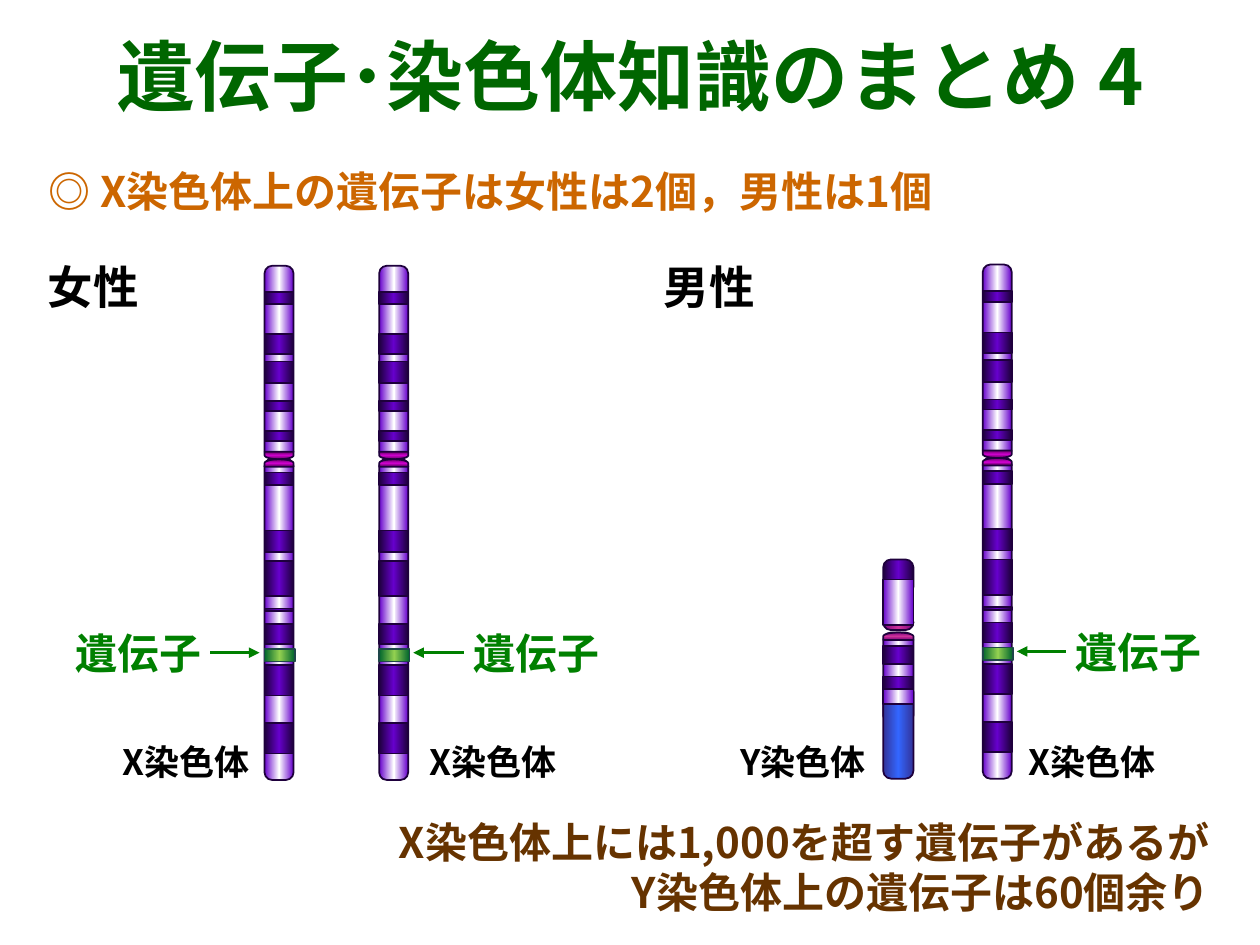
from copy import deepcopy
from dataclasses import dataclass
from typing import NamedTuple

from lxml.etree import SubElement
from pptx import Presentation
from pptx.dml.color import RGBColor as Rgb
from pptx.enum.shapes import MSO_CONNECTOR as Connector, MSO_SHAPE as Preset
from pptx.enum.text import MSO_ANCHOR as Anchor, MSO_AUTO_SIZE as AutoSize, PP_ALIGN as Align
from pptx.oxml.ns import qn
from pptx.util import Inches, Pt


class Box(NamedTuple):
    """A rectangle in cells of the slide grid."""
    column: float
    row: float
    columns: float
    rows: float


class Gradient(NamedTuple):
    """Edge and centre colours of a tube-like shading, with its outline."""
    edge: str
    centre: str
    line: str = "1E003C"


@dataclass(frozen=True)
class Theme:
    """Colours, fonts and type sizes of the slide."""
    font: str = "Noto Sans CJK JP"
    gene_font: str = "Arial"
    title: str = "006600"
    heading: str = "CC6600"
    ink: str = "000000"
    gene: str = "008000"
    note: str = "663300"
    title_size: int = 44
    sex_size: int = 26
    body_size: int = 24
    label_size: int = 20
    outline: float = 1
    arrow: float = 2
    light: Gradient = Gradient("6600CC", "FFFFFF")
    dark: Gradient = Gradient("1E003C", "6600CC")
    x_centromere: Gradient = Gradient("660066", "CC00CC")
    y_centromere: Gradient = Gradient("800080", "CC3399")
    y_tail: Gradient = Gradient("333399", "3366FF")
    gene_band: Gradient = Gradient("00642D", "92D050", "1E4649")


@dataclass(frozen=True)
class Label:
    """A text box with its lines and type."""
    box: Box
    lines: tuple[str, ...]
    size: int
    color: str
    align: Align = Align.LEFT
    anchor: Anchor = Anchor.TOP
    font: str = Theme.font
    wrap: bool = True
    grow: bool = True


class Band(NamedTuple):
    """A stripe given by its offset from the chromosome top."""
    offset: float
    rows: float


class Part(NamedTuple):
    """A piece of the Y chromosome."""
    band: Band
    gradient: Gradient
    preset: Preset = Preset.RECTANGLE
    roundness: float = 0.26


THEME = Theme()
GRID_COLUMNS, GRID_ROWS = 1000, 750
WIDTH, HEIGHT = Inches(10), Inches(7.5)
X_COLUMNS, Y_COLUMNS = 23, 24
X_ARMS = (Band(0, 153), Band(153, 255))
X_BANDS = (Band(164, 10), Band(21, 9), Band(54, 16), Band(76, 17), Band(107, 8), Band(131, 8),
           Band(210, 17), Band(234, 28), Band(284, 16), Band(317, 24), Band(363, 24))
X_THIN_BAND = Band(272, 2)
GENE_BAND = Band(304, 10)
Y_LOWER_ARM = (Part(Band(0, 28), THEME.dark, Preset.ROUNDED_RECTANGLE),
               Part(Band(58, 72), THEME.light, Preset.ROUNDED_RECTANGLE))
Y_UPPER_PARTS = (Part(Band(44, 12), THEME.y_centromere, Preset.ROUNDED_RECTANGLE, 0.5),
                 Part(Band(16, 36), THEME.light),
                 Part(Band(99, 75), THEME.y_tail, Preset.ROUNDED_RECTANGLE),
                 Part(Band(69, 14), THEME.dark),
                 Part(Band(100, 15), THEME.light),
                 Part(Band(93, 10), THEME.dark))


def across(columns: float) -> int:
    """Turn grid columns into a length."""
    return round(WIDTH * columns / GRID_COLUMNS)


def down(rows: float) -> int:
    """Turn grid rows into a length."""
    return round(HEIGHT * rows / GRID_ROWS)


def place(box: Box) -> tuple[int, int, int, int]:
    """Turn a grid box into left, top, width and height."""
    return across(box.column), down(box.row), across(box.columns), down(box.rows)


def draw_tube(shapes, preset: Preset, box: Box, gradient: Gradient,
              roundness: float = 0.26, rotation: int = 0) -> None:
    """Draw one outlined shape with a mirrored gradient."""
    shape = shapes.add_shape(preset, *place(box))
    shape.shadow.inherit = False
    shape.rotation = rotation
    if preset == Preset.ROUNDED_RECTANGLE:
        shape.adjustments[0] = roundness
    shape.fill.gradient()
    shape.fill.gradient_angle = 0
    first, middle = shape.fill.gradient_stops
    first.color.rgb = Rgb.from_string(gradient.edge)
    middle.color.rgb = Rgb.from_string(gradient.centre)
    middle.position = 0.5
    stops = shape.element.spPr.find(".//" + qn("a:gsLst"))
    last = deepcopy(stops[0])
    last.set("pos", "100000")
    stops.append(last)
    shape.line.color.rgb = Rgb.from_string(gradient.line)
    shape.line.width = Pt(THEME.outline)


def draw_cap(shapes, column: float, columns: float, centre_row: float,
             gradient: Gradient, rotation: int) -> None:
    """Draw a half-round centromere cap turned up or down."""
    box = Box(column + columns / 2 - 3, centre_row - columns / 2, 6, columns)
    draw_tube(shapes, Preset.FLOWCHART_DELAY, box, gradient, rotation=rotation)


def draw_x_chromosome(slide, column: float, row: float, thin_band: bool = True) -> None:
    """Draw an X chromosome with its bands and the marked gene."""
    shapes = slide.shapes.add_group_shape().shapes
    for arm in X_ARMS:
        draw_tube(shapes, Preset.ROUNDED_RECTANGLE,
                  Box(column, row + arm.offset, X_COLUMNS, arm.rows), THEME.light)
    for offset, rotation in ((150.5, 90), (156.5, 270)):
        draw_cap(shapes, column, X_COLUMNS, row + offset, THEME.x_centromere, rotation)
    for band in X_BANDS + ((X_THIN_BAND,) if thin_band else ()):
        draw_tube(shapes, Preset.RECTANGLE,
                  Box(column, row + band.offset, X_COLUMNS, band.rows), THEME.dark)
    draw_tube(shapes, Preset.RECTANGLE,
              Box(column, row + GENE_BAND.offset, X_COLUMNS + 1, GENE_BAND.rows), THEME.gene_band)


def draw_y_chromosome(slide, column: float, row: float) -> None:
    """Draw a Y chromosome from its parts."""
    shapes = slide.shapes.add_group_shape().shapes

    def draw_parts(parts: tuple[Part, ...]) -> None:
        """Draw parts from back to front."""
        for part in parts:
            box = Box(column, row + part.band.offset, Y_COLUMNS, part.band.rows)
            draw_tube(shapes, part.preset, box, part.gradient, part.roundness)

    draw_parts(Y_LOWER_ARM)
    draw_cap(shapes, column, Y_COLUMNS, row + 61, THEME.y_centromere, 270)
    draw_parts(Y_UPPER_PARTS)


def draw_label(slide, label: Label) -> None:
    """Write a label as one run per paragraph."""
    text_box = slide.shapes.add_textbox(*place(label.box))
    frame = text_box.text_frame
    frame.word_wrap = label.wrap
    frame.auto_size = AutoSize.SHAPE_TO_FIT_TEXT if label.grow else AutoSize.NONE
    frame.vertical_anchor = label.anchor
    for index, line in enumerate(label.lines):
        paragraph = frame.add_paragraph() if index else frame.paragraphs[0]
        paragraph.alignment = label.align
        run = paragraph.add_run()
        run.text = line
        run.font.size = Pt(label.size)
        run.font.bold = True
        run.font.name = label.font
        run.font.color.rgb = Rgb.from_string(label.color)
    for properties in text_box.element.iter(qn("a:rPr")):
        SubElement(properties, qn("a:ea")).set("typeface", THEME.font)


def draw_gene_pointer(slide, start: float, end: float, row: float, text_column: float) -> None:
    """Draw an arrow to the gene and its label."""
    arrow = slide.shapes.add_connector(
        Connector.STRAIGHT, across(start), down(row), across(end), down(row))
    arrow.line.color.rgb = Rgb.from_string(THEME.gene)
    arrow.line.width = Pt(THEME.arrow)
    properties = arrow.element.spPr
    SubElement(properties.find(qn("a:ln")), qn("a:tailEnd")).set("type", "triangle")
    SubElement(properties, qn("a:effectLst"))
    draw_label(slide, Label(Box(text_column, row - 25, 122, 50), ("遺伝子",), THEME.body_size,
                            THEME.gene, font=THEME.gene_font, wrap=False))


def main() -> None:
    """Build and save the slide."""
    presentation = Presentation()
    presentation.slide_width, presentation.slide_height = WIDTH, HEIGHT
    slide = presentation.slides.add_slide(presentation.slide_layouts[6])
    draw_label(slide, Label(Box(28, 20, 945, 79), ("遺伝子･染色体知識のまとめ 4",), THEME.title_size,
                            THEME.title, Align.CENTER, Anchor.MIDDLE, grow=False))
    draw_label(slide, Label(Box(29, 126, 962, 50), ("◎ X染色体上の遺伝子は女性は2個，男性は1個",),
                            THEME.body_size, THEME.heading, anchor=Anchor.MIDDLE))
    for column, sex in ((28, "女性"), (517, "男性")):
        draw_label(slide, Label(Box(column, 201, 94, 54), (sex,), THEME.sex_size, THEME.ink))
    draw_x_chromosome(slide, 210, 211)
    draw_x_chromosome(slide, 301, 211, thin_band=False)
    draw_y_chromosome(slide, 701, 444)
    draw_x_chromosome(slide, 780, 210)
    for column, name in ((84, "X染色体"), (328, "X染色体"), (574, "Y染色体"), (803, "X染色体")):
        draw_label(slide, Label(Box(column, 583, 127, 44), (name,), THEME.label_size,
                                THEME.ink, Align.CENTER))
    for pointer in ((167, 206, 518, 50), (368, 328, 518, 366), (846, 807, 517, 844)):
        draw_gene_pointer(slide, *pointer)
    draw_label(slide, Label(Box(201, 643, 769, 91), (
        "X染色体上には1,000を超す遺伝子があるが", "Y染色体上の遺伝子は60個余り"),
        THEME.body_size, THEME.note, Align.RIGHT))
    presentation.save("out.pptx")


if __name__ == "__main__":
    main()
